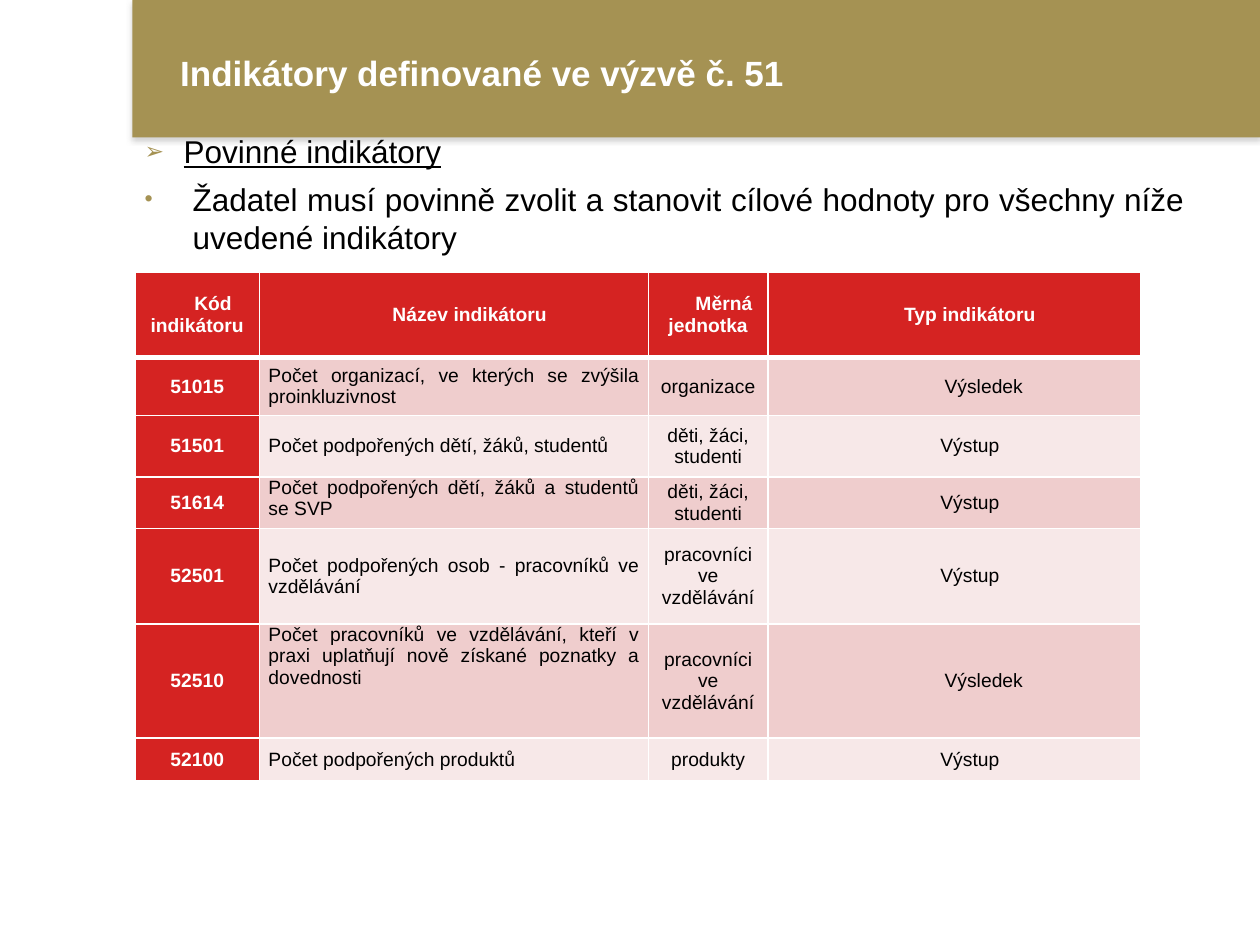
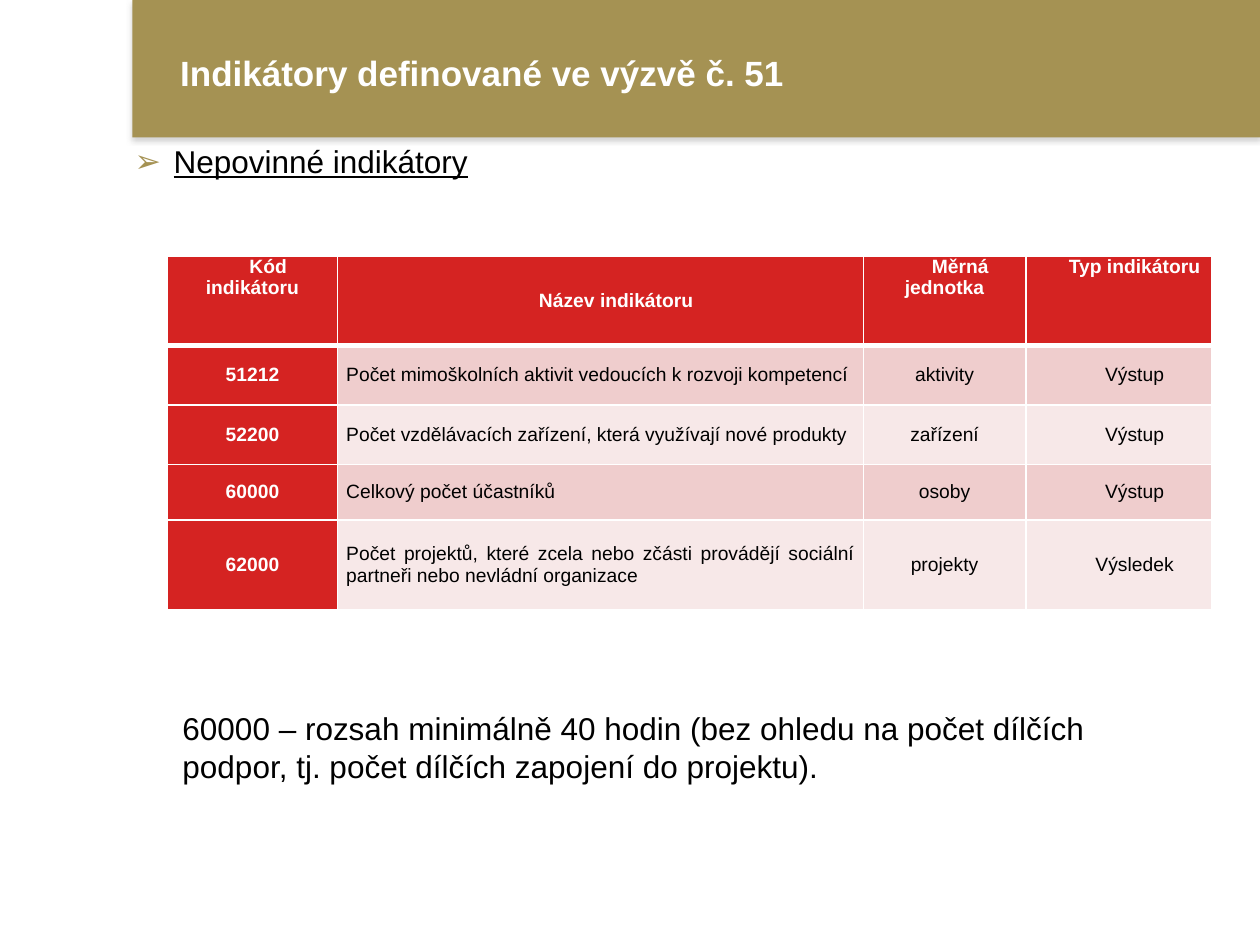
from lxml import etree
from pptx import Presentation
from pptx.dml.color import RGBColor
from pptx.enum.shapes import MSO_SHAPE
from pptx.enum.text import MSO_ANCHOR, MSO_AUTO_SIZE, PP_ALIGN
from pptx.oxml.ns import qn
from pptx.util import Inches, Pt

RECT = MSO_SHAPE.RECTANGLE
TOP, MIDDLE = MSO_ANCHOR.TOP, MSO_ANCHOR.MIDDLE
LEFT, CENTER, JUSTIFY = PP_ALIGN.LEFT, PP_ALIGN.CENTER, PP_ALIGN.JUSTIFY
NO_FIT = MSO_AUTO_SIZE.NONE

FONT = "Arial"
GOLD, RED, WHITE, BLACK = "A59253", "D52322", "FFFFFF", "000000"
STRIPES = ("EFCDCD", "F7E8E8")

# The slide is a grid of 100 columns by 75 rows
COLS, ROWS = 100, 75
BAND_BOX = (10.5, 0, 89.5, 10.9)
TITLE_BOX = (13.3, 4, 81.7, 3.5)

TITLE = "Indikátory definované ve výzvě č. 51"
HEADER = ("Kód indikátoru", "Název indikátoru", "Měrná jednotka", "Typ indikátoru")
OUTPUT, RESULT = "Výstup", "Výsledek"
PUPILS, STAFF = "děti, žáci, studenti", "pracovníci ve vzdělávání"

REQUIRED = [
    ("51015", "Počet organizací, ve kterých se zvýšila proinkluzivnost", "organizace", RESULT),
    ("51501", "Počet podpořených dětí, žáků, studentů", PUPILS, OUTPUT),
    ("51614", "Počet podpořených dětí, žáků a studentů se SVP", PUPILS, OUTPUT),
    ("52501", "Počet podpořených osob - pracovníků ve vzdělávání", STAFF, OUTPUT),
    ("52510", "Počet pracovníků ve vzdělávání, kteří v praxi uplatňují nově "
              "získané poznatky a dovednosti", STAFF, RESULT),
    ("52100", "Počet podpořených produktů", "produkty", OUTPUT),
]
OPTIONAL = [
    ("51212", "Počet mimoškolních aktivit vedoucích k rozvoji kompetencí", "aktivity", OUTPUT),
    ("52200", "Počet vzdělávacích zařízení, která využívají nové produkty", "zařízení", OUTPUT),
    ("60000", "Celkový počet účastníků", "osoby", OUTPUT),
    ("62000", "Počet projektů, které zcela nebo zčásti provádějí sociální "
              "partneři nebo nevládní organizace", "projekty", RESULT),
]

prs = Presentation()
prs.slide_width, prs.slide_height = Inches(10), Inches(7.5)


def rgb(value):
    return RGBColor.from_string(value)


def place(box):
    """Turn a box in grid units into slide lengths."""
    col, row = prs.slide_width / COLS, prs.slide_height / ROWS
    x, y, w, h = box
    return int(x * col), int(y * row), int(w * col), int(h * row)


def add_xml(parent, tag, **attrs):
    return etree.SubElement(parent, qn(tag), {k: str(v) for k, v in attrs.items()})


def style(p, size, color, bold=False, underline=False, align=LEFT):
    p.alignment = align
    font = p.font
    font.name, font.size, font.bold = FONT, Pt(size), bold
    font.underline = underline
    font.color.rgb = rgb(color)


def indent(p, left, first):
    pPr = p._p.get_or_add_pPr()
    pPr.set("marL", str(Inches(left)))
    pPr.set("indent", str(Inches(first)))
    return pPr


def add_bullet(p, char, hanging, percent):
    pPr = indent(p, hanging, -hanging)
    add_xml(add_xml(pPr, "a:buClr"), "a:srgbClr", val=GOLD)
    add_xml(pPr, "a:buSzPct", val=percent * 1000)
    add_xml(pPr, "a:buFont", typeface=FONT)
    add_xml(pPr, "a:buChar", char=char)


def add_band(s):
    """Gold header band behind the title, with a soft shadow."""
    band = s.shapes.add_shape(RECT, *place(BAND_BOX))
    band.shadow.inherit = False
    band.fill.solid()
    band.fill.fore_color.rgb = rgb(GOLD)
    band.line.fill.background()
    effects = band._element.spPr.find(qn("a:effectLst"))
    shadow = add_xml(effects, "a:outerShdw", blurRad=Pt(3.1), dist=Pt(1.8),
                     dir=90 * 60000, rotWithShape=0)
    add_xml(add_xml(shadow, "a:srgbClr", val="808080"), "a:alpha", val=35000)
    s.shapes._spTree.insert(2, band._element)


def new_slide():
    s = prs.slides.add_slide(prs.slide_layouts[5])
    add_band(s)
    title = s.shapes.title
    title.left, title.top, title.width, title.height = place(TITLE_BOX)
    tf = title.text_frame
    tf.text = TITLE
    tf.auto_size, tf.vertical_anchor = NO_FIT, MIDDLE
    style(tf.paragraphs[0], 20, WHITE, bold=True)
    return s


def add_text(s, box, text):
    """Text box with one 18-point paragraph."""
    tf = s.shapes.add_textbox(*place(box)).text_frame
    tf.word_wrap = True
    p = tf.paragraphs[0]
    p.text = text
    return tf, p


def add_heading(s, box, text, bullet_size):
    """Underlined heading with an arrow bullet."""
    tf, p = add_text(s, box, text)
    add_bullet(p, "➢", 0.31, bullet_size)
    p.space_after = Pt(2)
    style(p, 18, BLACK, underline=True)
    return tf


def set_borders(cell, top, bottom):
    tcPr = cell._tc.get_or_add_tcPr()
    for side, width in (("L", 1), ("R", 1), ("T", top), ("B", bottom)):
        ln = add_xml(tcPr, f"a:ln{side}", w=Pt(width))
        add_xml(add_xml(ln, "a:solidFill"), "a:srgbClr", val=WHITE)


def add_indicators(s, box, widths, heights, records, top_cells, result_indent):
    """Indicator table; widths and heights are shares of the box."""
    x, y, w, h = place(box)
    table = s.shapes.add_table(len(heights), len(widths), x, y, w, h).table
    for column, share in zip(table.columns, widths):
        column.width = int(w * share / sum(widths))
    for row, share in zip(table.rows, heights):
        row.height = int(h * share / sum(heights))

    for i, record in enumerate([HEADER, *records]):
        for j, text in enumerate(record):
            cell = table.cell(i, j)
            strong = i == 0 or j == 0
            set_borders(cell, top=3 if i == 1 else 1, bottom=3 if i == 0 else 1)
            cell.fill.solid()
            cell.fill.fore_color.rgb = rgb(RED if strong else STRIPES[(i - 1) % 2])
            cell.margin_left = cell.margin_right = Inches(0.07)
            cell.margin_top = cell.margin_bottom = 0
            cell.vertical_anchor = TOP if (i, j) in top_cells else MIDDLE
            p = cell.text_frame.paragraphs[0]
            p.text = text
            if i == 0 or j == 3:
                indent(p, 0, result_indent if text == RESULT else 0.25)
            style(p, 11, WHITE if strong else BLACK, bold=strong,
                  align=JUSTIFY if i and j == 1 else CENTER)


def required_slide():
    s = new_slide()
    tf = add_heading(s, (10.5, 10, 84.5, 11), "Povinné indikátory", 74)
    p = tf.add_paragraph()
    p.text = ("Žadatel musí povinně zvolit a stanovit cílové hodnoty "
              "pro všechny níže uvedené indikátory")
    add_bullet(p, "•", 0.38, 74)
    p.space_before, p.space_after = Pt(3.6), Pt(2)
    style(p, 18, BLACK, align=JUSTIFY)
    add_indicators(s, (10.7, 21.6, 79.8, 40.4), (0.99, 3.08, 0.95, 2.95),
                   (0.68, 0.46, 0.49, 0.41, 0.76, 0.91, 0.34), REQUIRED,
                   top_cells={(3, 1), (5, 1)}, result_indent=0.47)


def optional_slide():
    s = new_slide()
    add_heading(s, (9.7, 10.8, 88.4, 13.7), "Nepovinné indikátory", 100)
    add_indicators(s, (13.3, 20.3, 82.9, 28.1), (1.35, 4.18, 1.29, 1.48),
                   (0.71, 0.47, 0.47, 0.44, 0.71), OPTIONAL,
                   top_cells={(0, 0), (0, 2), (0, 3)}, result_indent=0.25)
    # Note on the minimum extent
    _, p = add_text(s, (13.5, 55.8, 80.6, 7.1),
                    "60000 – rozsah minimálně 40 hodin (bez ohledu na počet dílčích "
                    "podpor, tj. počet dílčích zapojení do projektu).")
    style(p, 18, BLACK)


def main():
    required_slide()
    optional_slide()
    prs.save("out.pptx")


if __name__ == "__main__":
    main()
